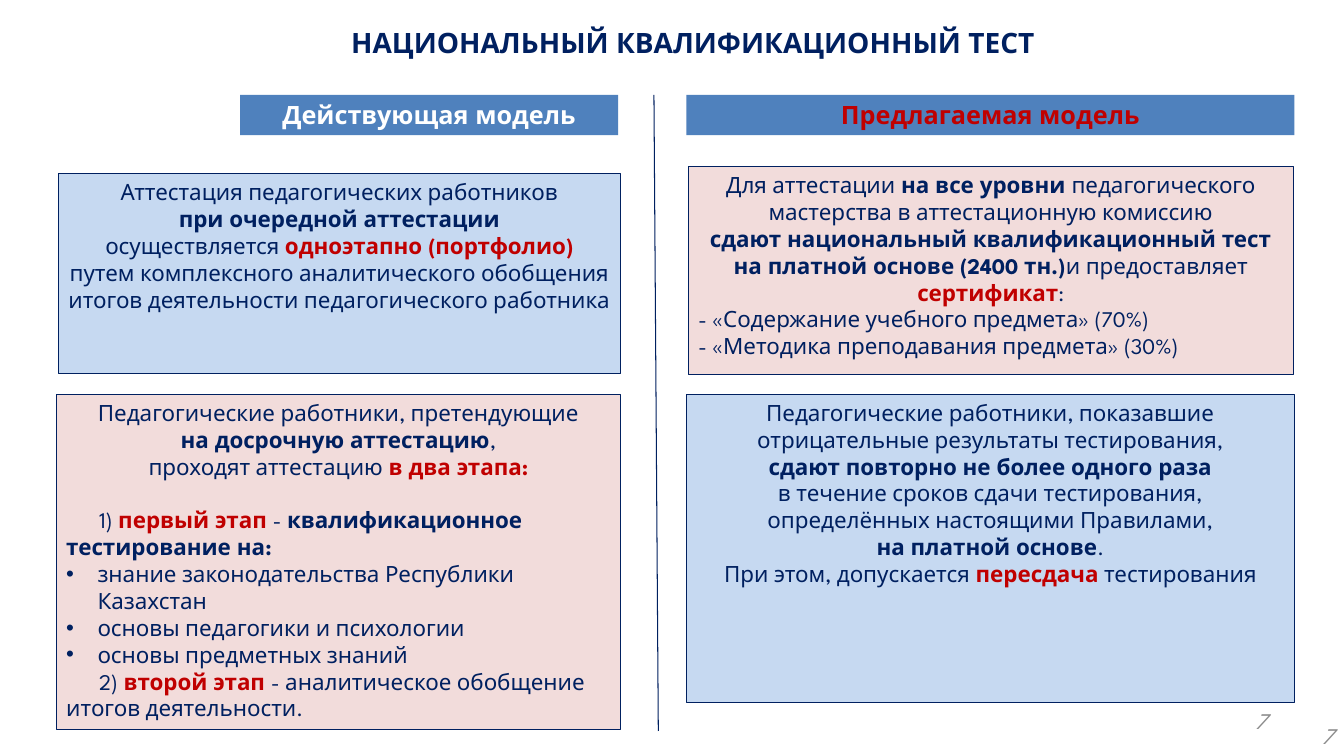
from lxml import etree
from pptx import Presentation
from pptx.dml.color import RGBColor
from pptx.enum.shapes import MSO_CONNECTOR, MSO_SHAPE
from pptx.enum.text import MSO_ANCHOR, PP_ALIGN
from pptx.oxml.ns import qn
from pptx.util import Cm, Pt

RECTANGLE = MSO_SHAPE.RECTANGLE
STRAIGHT = MSO_CONNECTOR.STRAIGHT
TOP, MIDDLE = MSO_ANCHOR.TOP, MSO_ANCHOR.MIDDLE
LEFT, CENTER, RIGHT = PP_ALIGN.LEFT, PP_ALIGN.CENTER, PP_ALIGN.RIGHT

FONT = "League Spartan"
COLORS = {
    "navy": "002060",
    "red": "C00000",
    "white": "FFFFFF",
    "gray": "8C8C8C",
    "header": "4F81BD",
    "pink": "F2DCDB",
    "blue": "C6D9F1",
}
STYLES = {
    "plain": ("navy", {"size": Pt(16), "bold": False}),
    "bold": ("navy", {"size": Pt(16), "bold": True}),
    "red": ("red", {"size": Pt(16), "bold": True}),
    "title": ("navy", {"size": Pt(20), "bold": True}),
    "current": ("white", {"size": Pt(18), "bold": True}),
    "proposed": ("red", {"size": Pt(18), "bold": True}),
    "number": ("gray", {"size": Pt(16), "italic": True}),
}
INDENTS = {"bullet": (Cm(0.79), Cm(-0.79)), "stage": (0, Cm(0.83))}
STAGE_GAP = Pt(19.2)

CURRENT_REGULAR = [
    (CENTER, [("Аттестация педагогических работников", "plain")]),
    (CENTER, [("при очередной аттестации", "bold")]),
    (CENTER, [("осуществляется ", "plain"), ("одноэтапно (портфолио)", "red")]),
    (CENTER, [("путем комплексного аналитического обобщения итогов "
               "деятельности педагогического работника", "plain")]),
]
CURRENT_EARLY = [
    (CENTER, [("Педагогические работники, претендующие", "plain")]),
    (CENTER, [("на досрочную аттестацию", "bold"), (",", "plain")]),
    (CENTER, [("проходят аттестацию ", "plain"), ("в два этапа:", "red")]),
    (LEFT, [("1) ", "plain"), ("первый этап ", "red"), ("- ", "plain"),
            ("квалификационное тестирование на:", "bold")], "stage", STAGE_GAP),
    (LEFT, [("знание законодательства Республики Казахстан", "plain")], "bullet"),
    (LEFT, [("основы педагогики и психологии", "plain")], "bullet"),
    (LEFT, [("основы предметных знаний", "plain")], "bullet"),
    (LEFT, [("2) ", "plain"), ("второй этап ", "red"),
            ("- аналитическое обобщение итогов деятельности.", "plain")], "stage"),
]
PROPOSED_TEST = [
    (CENTER, [("Для аттестации ", "plain"), ("на все уровни ", "bold"),
              ("педагогического мастерства в аттестационную комиссию", "plain")]),
    (CENTER, [("сдают национальный квалификационный тест на платной основе "
               "(2400 тн.)", "bold"),
              ("и предоставляет ", "plain"), ("сертификат", "red"), (":", "plain")]),
    (LEFT, [("- «Содержание учебного предмета» (70%)", "plain")]),
    (LEFT, [("- «Методика преподавания предмета» (30%)", "plain")]),
]
PROPOSED_RETAKE = [
    (CENTER, [("Педагогические работники, показавшие отрицательные "
               "результаты тестирования,", "plain")]),
    (CENTER, [("сдают повторно не более одного раза", "bold")]),
    (CENTER, [("в течение сроков сдачи тестирования, определённых "
               "настоящими Правилами,", "plain")]),
    (CENTER, [("на платной основе", "bold"), (".", "plain")]),
    (CENTER, [("При этом, допускается ", "plain"), ("пересдача", "red"),
              (" тестирования", "plain")]),
]


def color(name):
    return RGBColor.from_string(COLORS[name])


def indent_paragraph(paragraph, kind):
    properties = paragraph._p.get_or_add_pPr()
    margin, first_line = INDENTS[kind]
    properties.set("marL", str(int(margin)))
    properties.set("indent", str(int(first_line)))
    if kind == "bullet":
        etree.SubElement(properties, qn("a:buFont")).set("typeface", "Arial")
        etree.SubElement(properties, qn("a:buChar")).set("char", "•")


def add_run(paragraph, text, style):
    run = paragraph.add_run()
    run.text = text
    tone, font_values = STYLES[style]
    for name, value in font_values.items():
        setattr(run.font, name, value)
    run.font.name = FONT
    run.font.color.rgb = color(tone)


def write_paragraphs(frame, paragraphs, anchor):
    frame.word_wrap = True
    frame.vertical_anchor = anchor
    for index, (alignment, runs, *layout) in enumerate(paragraphs):
        paragraph = frame.add_paragraph() if index else frame.paragraphs[0]
        paragraph.alignment = alignment
        if len(layout) > 1:
            paragraph.space_before = layout[1]
        if layout:
            indent_paragraph(paragraph, layout[0])
        for text, style in runs:
            add_run(paragraph, text, style)


def add_label(slide, place, text, style, alignment):
    label = slide.shapes.add_textbox(*map(Cm, place))
    write_paragraphs(label.text_frame, [(alignment, [(text, style)])], MIDDLE)


def add_panel(slide, place, fill, paragraphs, outlined=True):
    panel = slide.shapes.add_shape(RECTANGLE, *map(Cm, place))
    panel.shadow.inherit = False
    panel.fill.solid()
    panel.fill.fore_color.rgb = color(fill)
    if outlined:
        panel.line.color.rgb = color("navy")
        panel.line.width = Pt(0.75)
    else:
        panel.line.fill.background()
    write_paragraphs(panel.text_frame, paragraphs, TOP)


def add_header(slide, place, text, style):
    add_panel(slide, place, "header", [(CENTER, [(text, style)])], outlined=False)


def add_divider(slide, *ends):
    divider = slide.shapes.add_connector(STRAIGHT, *map(Cm, ends))
    divider.line.color.rgb = color("navy")
    divider.line.width = Pt(0.75)
    etree.SubElement(divider._element.spPr, qn("a:effectLst"))


def main():
    deck = Presentation()
    deck.slide_width, deck.slide_height = Cm(33.87), Cm(19.05)
    slide = deck.slides.add_slide(deck.slide_layouts[6])

    add_label(slide, (5.05, 0.3, 24.82, 1.55),
              "НАЦИОНАЛЬНЫЙ КВАЛИФИКАЦИОННЫЙ ТЕСТ", "title", CENTER)
    add_panel(slide, (17.35, 4.19, 15.24, 5.26), "pink", PROPOSED_TEST)
    add_panel(slide, (17.3, 9.93, 15.32, 7.77), "blue", PROPOSED_RETAKE)
    add_divider(slide, 16.48, 2.39, 16.59, 18.42)
    add_header(slide, (17.3, 2.39, 15.32, 1.02), "Предлагаемая модель", "proposed")
    add_header(slide, (6.05, 2.39, 9.53, 1.02), "Действующая модель", "current")
    add_panel(slide, (1.42, 9.93, 14.22, 8.46), "pink", CURRENT_EARLY)
    add_panel(slide, (1.47, 4.37, 14.17, 5.05), "blue", CURRENT_REGULAR)
    for left, top in ((24.28, 17.65), (25.96, 18.03)):
        add_label(slide, (left, top, 7.9, 1.02), "7", "number", RIGHT)

    deck.save("out.pptx")


if __name__ == "__main__":
    main()
